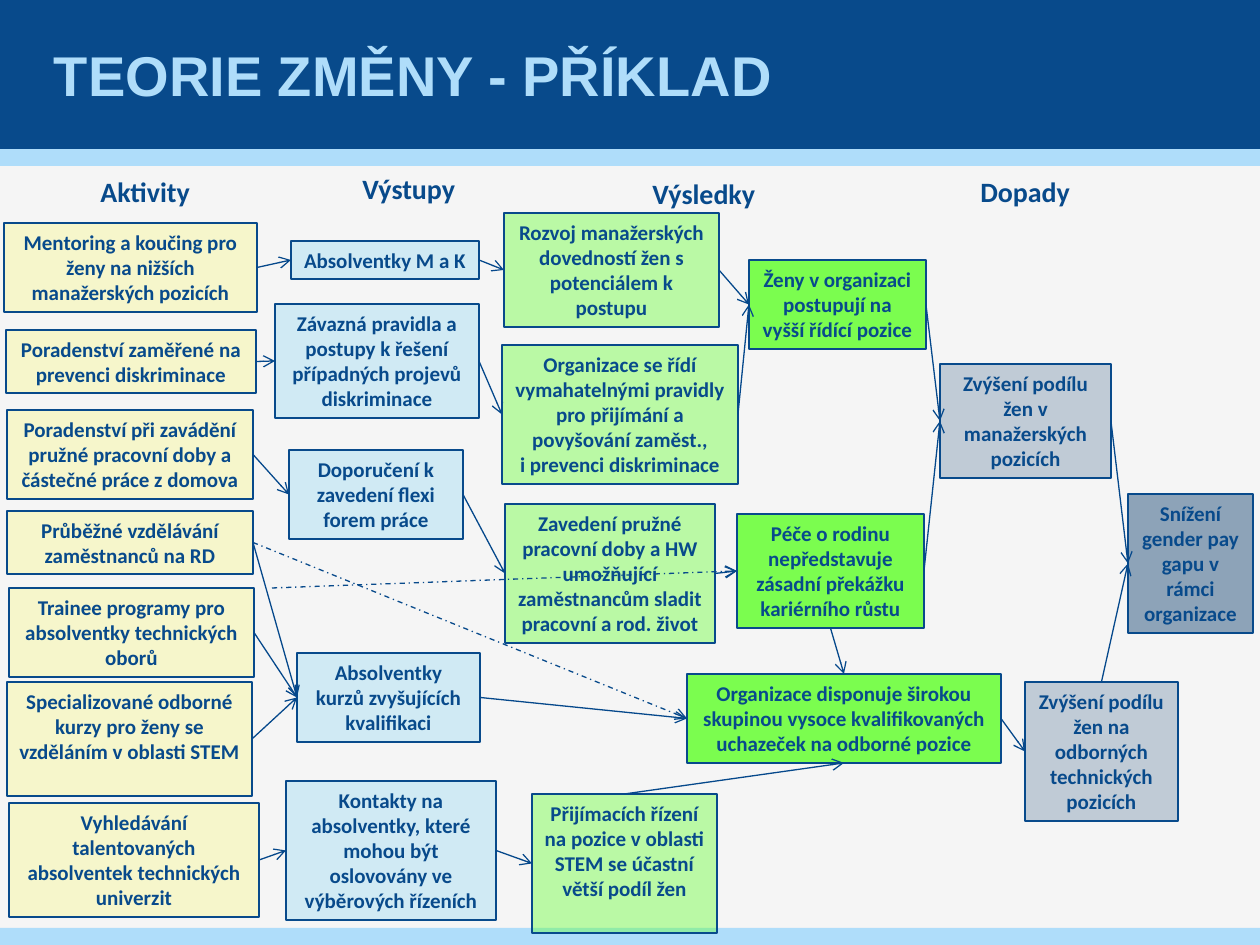
from lxml import etree
from pptx import Presentation
from pptx import util as u
from pptx.dml.color import RGBColor
from pptx.enum import dml, shapes, text
from pptx.oxml.ns import qn

SCALE = 914400 // 126
NAVY, SKY, INK = "084A8B", "AFDDFA", "05488B"
TOP, LEFT, BOTTOM, RIGHT = range(4)  # connection sites of a rectangle

# column kind: fill, opacity in percent
KINDS = {
    "act": ("FFFF00", 17),
    "out": ("00B0F0", 15),
    "step": ("66FF33", 41),
    "result": ("66FF33", 85),
    "impact": ("063768", 22),
    "goal": ("063768", 43),
}

HEADS = [
    ("Aktivity", 88, 168, 116),
    ("Výstupy", 350, 165, 120),
    ("Výsledky", 640, 170, 130),
    ("Dopady", 968, 168, 116),
]

# name: kind, left, top, width, lines of height, words
BOXES = {
    "mentor": ("act", 4, 223, 253, 3, "Mentoring a koučing pro ženy na nižších manažerských pozicích"),
    "prevent": ("act", 6, 330, 250, 2, "Poradenství zaměřené na prevenci diskriminace"),
    "hours": ("act", 7, 410, 246, 3,
              "Poradenství při zavádění pružné pracovní doby a částečné práce z domova"),
    "leave": ("act", 7, 511, 246, 2, "Průběžné vzdělávání zaměstnanců na RD"),
    "trainee": ("act", 9, 588, 245, 3, "Trainee programy pro absolventky technických oborů"),
    "stem": ("act", 7, 682, 245, 4,
             "Specializované odborné kurzy pro ženy se vzděláním v oblasti STEM"),
    "talent": ("act", 9, 803, 250, 4, "Vyhledávání talentovaných absolventek technických univerzit"),
    "grads": ("out", 291, 241, 188, 1, "Absolventky M a K"),
    "rules": ("out", 275, 304, 204, 4,
              "Závazná pravidla a postupy k řešení případných projevů diskriminace"),
    "advice": ("out", 289, 450, 174, 3, "Doporučení k zavedení flexi forem práce"),
    "course": ("out", 297, 653, 183, 3, "Absolventky kurzů zvyšujících kvalifikaci"),
    "contact": ("out", 286, 781, 210, 5,
                "Kontakty na absolventky, které mohou být oslovovány ve výběrových řízeních"),
    "skills": ("step", 504, 213, 215, 4,
               "Rozvoj manažerských dovedností žen s potenciálem k postupu"),
    "fair": ("step", 502, 345, 236, 5,
             "Organizace se řídí vymahatelnými pravidly pro přijímání a "
             "povyšování zaměst.,\vi prevenci diskriminace"),
    "flexi": ("step", 505, 504, 210, 5,
              "Zavedení pružné pracovní doby a HW umožňující zaměstnancům "
              "sladit pracovní a rod. život"),
    "hiring": ("step", 532, 794, 185, 5,
               "Přijímacích řízení na pozice v oblasti STEM se účastní větší podíl žen"),
    "rise": ("result", 749, 260, 177, 3, "Ženy v organizaci postupují na vyšší řídící pozice"),
    "care": ("result", 737, 514, 187, 4,
             "Péče o rodinu nepředstavuje zásadní překážku kariérního růstu"),
    "pool": ("result", 687, 674, 314, 3,
             "Organizace disponuje širokou skupinou vysoce kvalifikovaných "
             "uchazeček na odborné pozice"),
    "leaders": ("impact", 940, 364, 171, 4, "Zvýšení podílu žen v manažerských pozicích"),
    "experts": ("impact", 1025, 682, 153, 5,
                "Zvýšení podílu žen na odborných technických pozicích"),
    "gap": ("goal", 1128, 494, 125, 5, "Snížení gender pay gapu v rámci organizace"),
}

# links from a right side to a left side
FLOWS = """mentor-grads prevent-rules hours-advice leave-course trainee-course
stem-course talent-contact grads-skills rules-fair advice-flexi course-pool
contact-hiring skills-rise fair-rise flexi-care rise-leaders care-leaders
leaders-gap pool-experts"""


def px(n):
    return u.Emu(n * SCALE)


def rgb(code):
    return RGBColor.from_string(code)


def write(shape, words, size=12, font="Calibri", color=NAVY, align="LEFT",
          anchor="TOP", wrap=True, grow=True, pad=None):
    frame = shape.text_frame
    frame.word_wrap = wrap
    frame.vertical_anchor = getattr(text.MSO_ANCHOR, anchor)
    fit = text.MSO_AUTO_SIZE
    frame.auto_size = fit.SHAPE_TO_FIT_TEXT if grow else fit.NONE
    if pad is not None:
        frame.margin_left = frame.margin_right = px(pad)
        frame.margin_top = frame.margin_bottom = 0
    frame.text = words
    para = frame.paragraphs[0]
    para.alignment = getattr(text.PP_ALIGN, align)
    for run in para.runs:
        run.font.size, run.font.bold, run.font.name = u.Pt(size), True, font
        run.font.color.rgb = rgb(color)


def label(slide, words, x, y, w, h, **form):
    write(slide.shapes.add_textbox(px(x), px(y), px(w), px(h)), words, **form)


def rect(slide, x, y, w, h, fill, alpha=100, line=None):
    shape = slide.shapes.add_shape(
        shapes.MSO_SHAPE.RECTANGLE, px(x), px(y), px(w), px(h))
    shape.shadow.inherit = False
    shape.fill.solid()
    shape.fill.fore_color.rgb = rgb(fill)
    if alpha < 100:
        tint = shape.fill._xPr.find(qn("a:solidFill"))[0]
        etree.SubElement(tint, qn("a:alpha"), val=str(alpha * 1000))
    if line:
        shape.line.color.rgb = rgb(line)
        shape.line.width = u.Pt(1)
    else:
        shape.line.fill.background()
    return shape


def box(slide, kind, x, y, w, rows, words):
    """Draw a box whose height follows its number of text lines."""
    fill, alpha = KINDS[kind]
    shape = rect(slide, x, y, w, round(25.3 * rows + 12.7), fill, alpha, NAVY)
    write(shape, words, align="CENTER")
    return shape


def arrow(slide, start, end, out=RIGHT, into=LEFT, dash=False):
    """Link two boxes; start may also be a free (x, y) point."""
    free = isinstance(start, tuple)
    x, y = start if free else (0, 0)
    link = slide.shapes.add_connector(
        shapes.MSO_CONNECTOR.STRAIGHT, px(x), px(y), px(x), px(y))
    if not free:
        link.begin_connect(start, out)
    link.end_connect(end, into)
    link.line.color.rgb = rgb(NAVY if dash else INK)
    link.line.width = u.Pt(0.75)
    if dash:
        link.line.dash_style = dml.MSO_LINE.DASH_DOT
    etree.SubElement(link.line._get_or_add_ln(), qn("a:tailEnd"), type="arrow")
    etree.SubElement(link._element.spPr, qn("a:effectLst"))


def main():
    deck = Presentation()
    deck.slide_width, deck.slide_height = px(1260), px(945)
    slide = deck.slides.add_slide(deck.slide_layouts[6])
    slide.background.fill.solid()
    slide.background.fill.fore_color.rgb = rgb("F5F5F5")

    for y, h, fill in ((149, 17, SKY), (0, 149, NAVY), (928, 17, SKY)):
        rect(slide, 0, y, 1260, h, fill)
    label(slide, "TEORIE ZMĚNY - PŘÍKLAD", 49, 0, 1160, 149, size=32,
          font="Arial", color=SKY, anchor="MIDDLE", grow=False, pad=5)
    for words, x, y, w in HEADS:
        label(slide, words, x, y, w, 47, size=16, wrap=False)

    made = {name: box(slide, *data) for name, data in BOXES.items()}
    for flow in FLOWS.split():
        start, end = flow.split("-")
        arrow(slide, made[start], made[end])
    arrow(slide, made["care"], made["pool"], BOTTOM, TOP)
    arrow(slide, made["hiring"], made["pool"], TOP, BOTTOM)
    arrow(slide, made["experts"], made["gap"], TOP, LEFT)
    arrow(slide, (272, 588), made["care"], dash=True)
    arrow(slide, made["leave"], made["pool"], dash=True)

    deck.save("out.pptx")


if __name__ == "__main__":
    main()
